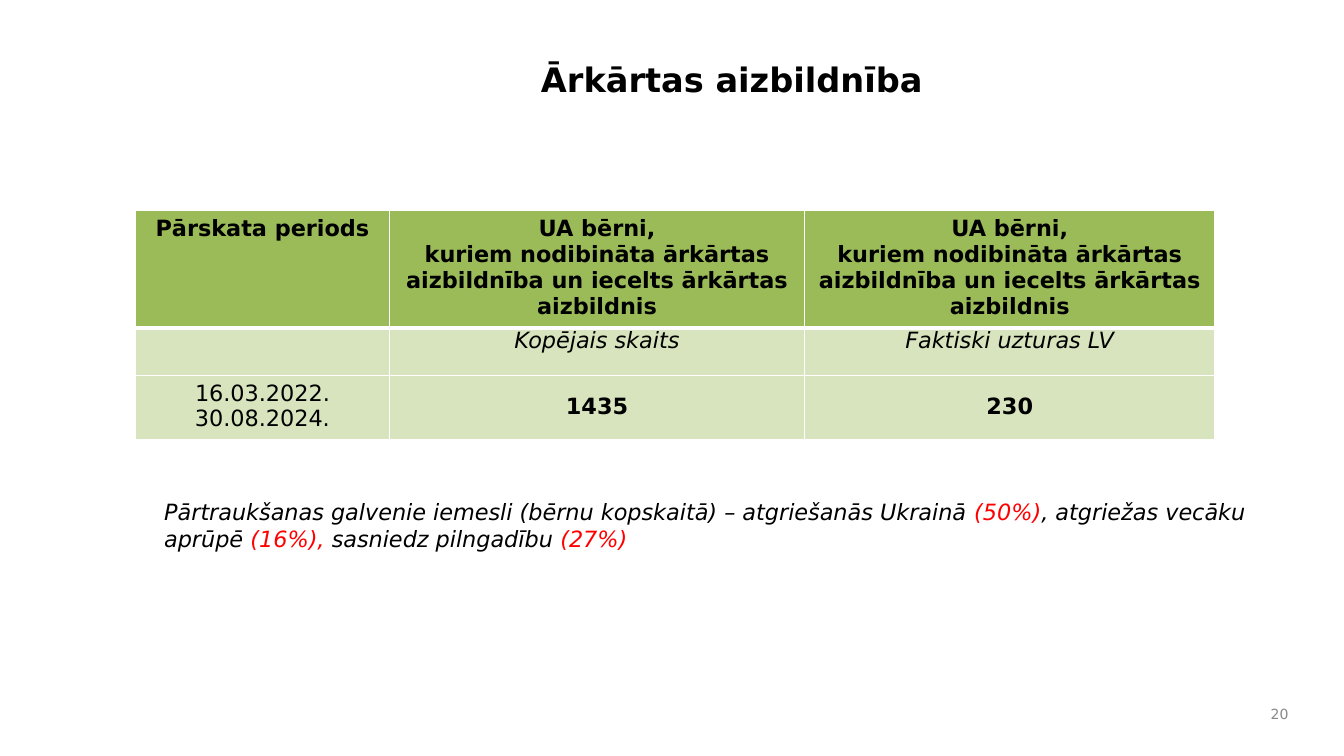
from pptx import Presentation
from pptx.dml.color import RGBColor
from pptx.enum.text import MSO_ANCHOR, MSO_AUTO_SIZE, PP_ALIGN
from pptx.oxml import parse_xml
from pptx.oxml.ns import nsdecls
from pptx.util import Pt


def rgb(value):
    return RGBColor.from_string(value)


def add_run(p, text, color="000000", **fmt):
    r = p.add_run()
    r.text = text
    r.font.color.rgb = rgb(color)
    for name, value in {"name": "DejaVu Sans", "size": Pt(16), **fmt}.items():
        setattr(r.font, name, value)


prs = Presentation()
prs.slide_width, prs.slide_height = Pt(960), Pt(540)
s = prs.slides.add_slide(prs.slide_layouts[5])

title = s.shapes.title
title.left, title.top, title.width, title.height = Pt(186.5), Pt(38.2), Pt(672.5), Pt(67)
tf = title.text_frame
tf.auto_size = MSO_AUTO_SIZE.NONE
tf.vertical_anchor = MSO_ANCHOR.TOP
p = tf.paragraphs[0]
p.alignment = PP_ALIGN.CENTER
add_run(p, "Ārkārtas aizbildnība", size=Pt(24), bold=True)

number = s.shapes.add_textbox(Pt(895.7), Pt(498.2), Pt(31.7), Pt(23.8))
tf = number.text_frame
tf.word_wrap = True
tf.vertical_anchor = MSO_ANCHOR.MIDDLE
p = tf.paragraphs[0]
p.alignment = PP_ALIGN.RIGHT
add_run(p, "20", "898989", size=Pt(10))

children = ["UA bērni,", "kuriem nodibināta ārkārtas aizbildnība un iecelts ārkārtas aizbildnis"]
rows = [
    [["Pārskata periods"], children, children],
    [[], ["Kopējais skaits"], ["Faktiski uzturas LV"]],
    [["16.03.2022. 30.08.2024."], ["1435"], ["230"]],
]
widths = [181.4, 296.6, 293]
heights = [81, 33.6, 44]
table = s.shapes.add_table(3, 3, Pt(96.8), Pt(150.5), Pt(sum(widths)), Pt(sum(heights))).table
for col, width in zip(table.columns, widths):
    col.width = Pt(width)
for row, height in zip(table.rows, heights):
    row.height = Pt(height)

for i, row in enumerate(rows):
    for j, lines in enumerate(row):
        cell = table.cell(i, j)
        tight = i > 0 and j > 0
        cell.margin_left = cell.margin_right = Pt(5.4 if tight else 7.2)
        cell.margin_top = cell.margin_bottom = Pt(0 if tight else 3.6)
        cell.vertical_anchor = MSO_ANCHOR.MIDDLE if tight and i == 2 else MSO_ANCHOR.TOP
        borders = {"L": 1, "R": 1, "T": 3 if i == 1 else 1, "B": 3 if i == 0 else 1}
        for side, width in borders.items():
            cell._tc.get_or_add_tcPr().append(parse_xml(
                f'<a:ln{side} {nsdecls("a")} w="{Pt(width)}"><a:solidFill>'
                f'<a:srgbClr val="FFFFFF"/></a:solidFill></a:ln{side}>'))
        cell.fill.solid()
        cell.fill.fore_color.rgb = rgb("9BBB59" if i == 0 else "D7E4BD")
        tf = cell.text_frame
        for n, line in enumerate(lines):
            p = tf.add_paragraph() if n else tf.paragraphs[0]
            p.alignment = PP_ALIGN.CENTER
            add_run(p, line, bold=i == 0 or (i == 2 and j > 0), italic=i == 1)

reasons = s.shapes.add_textbox(Pt(110.2), Pt(352.1), Pt(801.4), Pt(46))
tf = reasons.text_frame
tf.word_wrap = True
tf.auto_size = MSO_AUTO_SIZE.SHAPE_TO_FIT_TEXT
p = tf.paragraphs[0]
for text, color in [
    ("Pārtraukšanas galvenie iemesli (bērnu kopskaitā) – atgriešanās Ukrainā ", "000000"),
    ("(50%)", "FF0000"),
    (", atgriežas vecāku aprūpē ", "000000"),
    ("(16%), ", "FF0000"),
    ("sasniedz pilngadību", "000000"),
    (" (27%)", "FF0000"),
]:
    add_run(p, text, color, italic=True)

prs.save("out.pptx")
